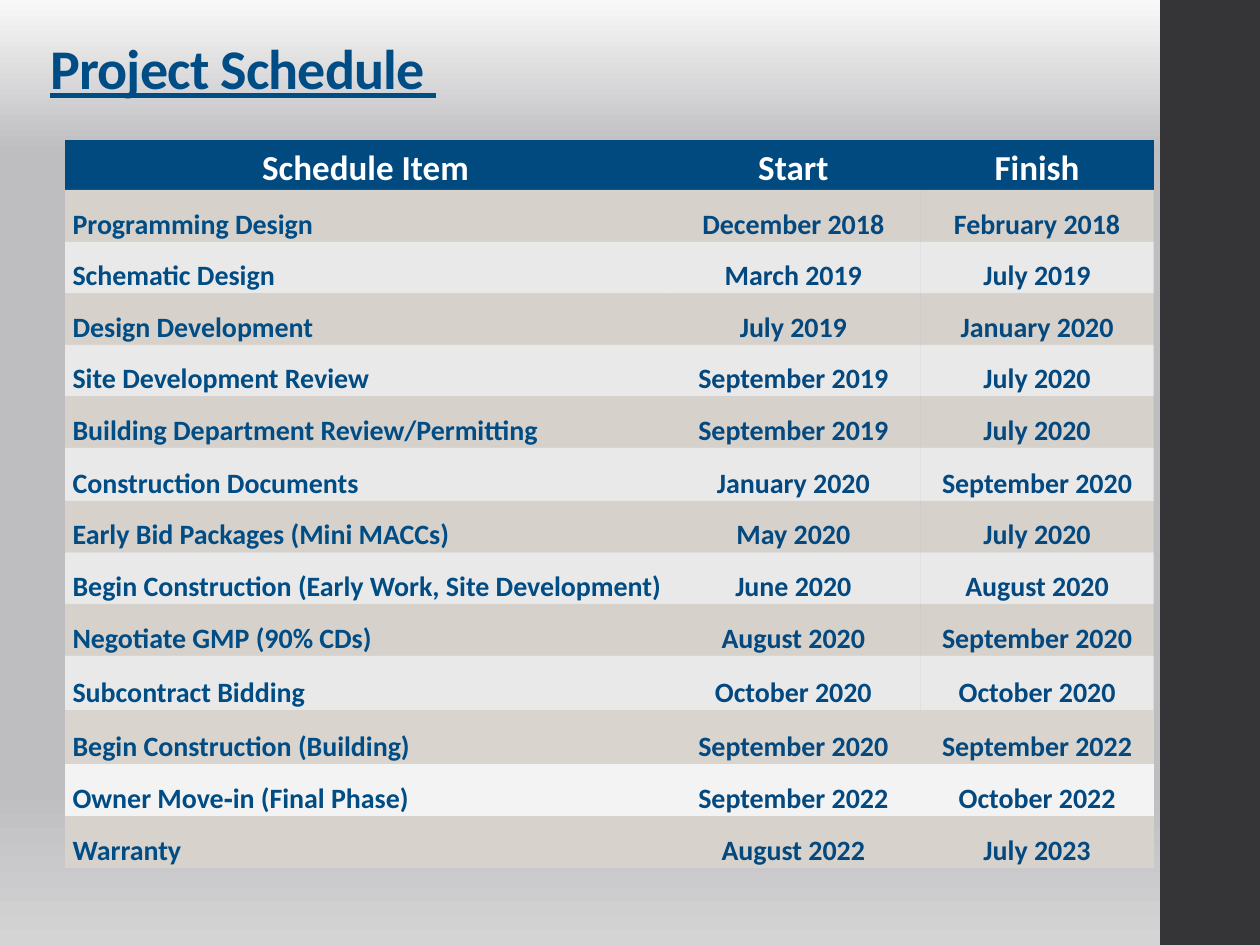
from copy import deepcopy

from lxml.etree import SubElement
from pptx import Presentation
from pptx.dml.color import RGBColor
from pptx.enum.shapes import MSO_SHAPE
from pptx.enum.text import MSO_ANCHOR, MSO_AUTO_SIZE, PP_ALIGN
from pptx.oxml.ns import qn
from pptx.util import Pt

NAVY, BLUE, DATE = "014A7F", "004C85", "03487F"
SAND, WHITE = "E3DBD0", "FFFFFF"
PLAIN = "{2D5ABB26-0587-4C30-8999-92F81FD0307C}"
STOPS = [(0, "F8F8F8"), (16, "BEBEC1"), (83, "BEBEC1"), (100, "D4D4D5")]
WIDTHS = [343.5, 145.4, 133.2]
HEAD = ("Schedule Item", "Start", "Finish")
TASKS = [
    ("Programming Design", "December 2018", "February 2018"),
    ("Schematic Design", "March 2019", "July 2019"),
    ("Design Development", "July 2019", "January 2020"),
    ("Site Development Review", "September 2019", "July 2020"),
    ("Building Department Review/Permitting", "September 2019", "July 2020"),
    ("Construction Documents", "January 2020", "September 2020"),
    ("Early Bid Packages (Mini MACCs)", "May 2020", "July 2020"),
    ("Begin Construction (Early Work, Site Development)", "June 2020", "August 2020"),
    ("Negotiate GMP (90% CDs)", "August 2020", "September 2020"),
    ("Subcontract Bidding", "October 2020", "October 2020"),
    ("Begin Construction (Building)", "September 2020", "September 2022"),
    ("Owner Move‐in (Final Phase)", "September 2022", "October 2022"),
    ("Warranty", "August 2022", "July 2023"),
]
TALL = {6: 30.2, 10: 31, 11: 31, 12: 29.9}
SOLID = {11: "D9D4CD", 12: "F3F3F3", 13: "D7D2CB"}


def tint(color, code):
    """Set a colour format from a hex string."""
    color.rgb = RGBColor.from_string(code)


def paint(fill, code):
    """Make a fill solid in the given colour."""
    fill.solid()
    tint(fill.fore_color, code)


def style(para, size, code, align):
    """Set the font and alignment of a bold paragraph."""
    font = para.font
    font.name, font.size, font.bold = "Calibri", Pt(size), True
    tint(font.color, code)
    para.alignment = align


def backdrop(slide):
    """Fill the background with a vertical grey gradient."""
    fill = slide.background.fill
    fill.gradient()
    fill.gradient_angle = 270
    stops = slide.element.find(".//" + qn("a:gsLst"))
    for _ in STOPS[2:]:
        stops.append(deepcopy(stops[0]))
    for stop, (pos, code) in zip(fill.gradient_stops, STOPS):
        stop.position = pos / 100
        tint(stop.color, code)


def sidebar(slide, left, top, width, height):
    """Draw the dark band at the right edge."""
    band = slide.shapes.add_shape(
        MSO_SHAPE.RECTANGLE, Pt(left), Pt(top), Pt(width), Pt(height))
    band.shadow.inherit = False
    paint(band.fill, "353537")
    band.line.fill.background()


def heading(slide, left, top, width, height):
    """Place and format the slide title."""
    title = slide.shapes.title
    title.left, title.top = Pt(left), Pt(top)
    title.width, title.height = Pt(width), Pt(height)
    frame = title.text_frame
    frame.text = "Project Schedule "
    frame.auto_size = MSO_AUTO_SIZE.NONE
    frame.vertical_anchor = MSO_ANCHOR.BOTTOM
    para = frame.paragraphs[0]
    para.line_spacing = 0.9
    style(para, 32, BLUE, PP_ALIGN.LEFT)
    para.font.underline = True
    para.runs[0].font.underline = True
    para.runs[0].font._element.set("spc", "-50")


def shade(cell, row):
    """Fill a cell according to its row."""
    if row == 0:
        paint(cell.fill, NAVY)
    elif row in SOLID:
        paint(cell.fill, SOLID[row])
    else:
        paint(cell.fill, SAND if row % 2 else WHITE)
        color = cell._tc.tcPr.find(".//" + qn("a:srgbClr"))
        SubElement(color, qn("a:alpha"), val="67000")


def write(cell, text, row, col):
    """Write the text of a cell and format it."""
    cell.margin_left = cell.margin_right = cell.margin_top = Pt(0.7)
    cell.margin_bottom = Pt(0)
    cell.vertical_anchor = MSO_ANCHOR.BOTTOM
    task = row > 0 and col == 0
    cell.text = f" {text}" if task else text
    para = cell.text_frame.paragraphs[0]
    if row == 0:
        style(para, 20, WHITE, PP_ALIGN.CENTER)
    elif task:
        style(para, 16, BLUE, PP_ALIGN.LEFT)
    else:
        style(para, 16, DATE, PP_ALIGN.CENTER)


def schedule(slide, left, top, width, height):
    """Build the table of tasks and dates."""
    rows = [HEAD, *TASKS]
    frame = slide.shapes.add_table(
        len(rows), len(HEAD), Pt(left), Pt(top), Pt(width), Pt(height))
    table = frame.table
    table.horz_banding = False
    frame.element.find(".//" + qn("a:tableStyleId")).text = PLAIN
    for column, size in zip(table.columns, WIDTHS):
        column.width = Pt(size)
    for row, texts in enumerate(rows):
        table.rows[row].height = Pt(TALL.get(row, 29.5) if row else 28.6)
        for col, text in enumerate(texts):
            cell = table.cell(row, col)
            shade(cell, row)
            write(cell, text, row, col)


def main():
    """Build and save the slide."""
    deck = Presentation()
    deck.slide_width, deck.slide_height = Pt(720), Pt(540)
    slide = deck.slides.add_slide(deck.slide_layouts[5])
    backdrop(slide)
    sidebar(slide, 663, 0, 57, 540)
    heading(slide, 21.6, 7.2, 653.8, 54.7)
    schedule(slide, 37.2, 80, sum(WIDTHS), 416.2)
    deck.save("out.pptx")


if __name__ == "__main__":
    main()
